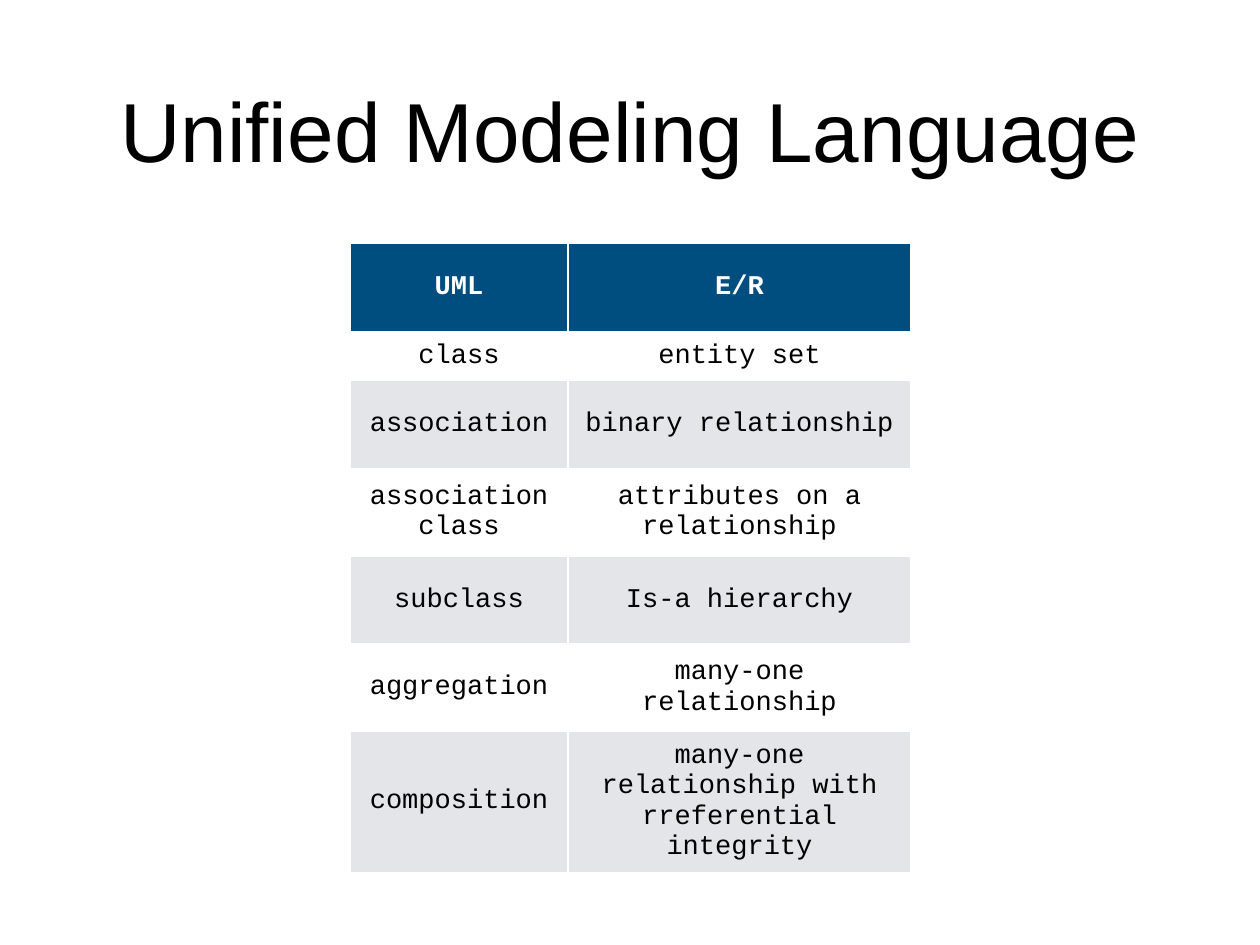
from dataclasses import dataclass

from pptx import Presentation
from pptx.dml.color import RGBColor
from pptx.enum.text import MSO_ANCHOR, PP_ALIGN
from pptx.slide import Slide
from pptx.util import Inches, Pt

PAGE_WIDTH = Inches(14.22)
PAGE_HEIGHT = Inches(10.67)
INSET = Inches(0.06)

BLACK = RGBColor(0x00, 0x00, 0x00)
WHITE = RGBColor(0xFF, 0xFF, 0xFF)
HEADER_BLUE = RGBColor(0x00, 0x4D, 0x80)
BAND_GREY = RGBColor(0xE3, 0xE5, 0xE8)

TITLE_FORMAT = {"name": "Arial", "size": Pt(68), "bold": False}
BODY_FORMAT = {"name": "Courier New", "size": Pt(22), "bold": False}
HEADER_FORMAT = BODY_FORMAT | {"bold": True}
MARGINS = {f"margin_{side}": INSET for side in ("left", "top", "right", "bottom")}

TABLE_LEFT, TABLE_TOP = 27.78, 25.77
COLUMN_PERCENTS = (17.3, 27.22)
TALL_ROW, SHORT_ROW = 9.28, 5.25


@dataclass(frozen=True)
class Mapping:
    uml: str
    entity_relationship: str
    height: float = TALL_ROW


MAPPINGS = (
    Mapping("UML", "E/R"),
    Mapping("class", "entity set", SHORT_ROW),
    Mapping("association", "binary relationship"),
    Mapping("association class", "attributes on a relationship"),
    Mapping("subclass", "Is-a hierarchy"),
    Mapping("aggregation", "many-one relationship"),
    Mapping("composition", "many-one relationship with rreferential integrity"),
)


def across(percent: float) -> int:
    return round(PAGE_WIDTH * percent / 100)


def down(percent: float) -> int:
    return round(PAGE_HEIGHT * percent / 100)


def apply(target: object, values: dict) -> None:
    for name, value in values.items():
        setattr(target, name, value)


def write(frame, text: str, values: dict, color: RGBColor) -> None:
    para = frame.paragraphs[0]
    para.alignment = PP_ALIGN.CENTER
    span = para.add_run()
    span.text = text
    apply(span.font, values)
    span.font.color.rgb = color


def draw_title(page: Slide, text: str) -> None:
    box = page.shapes.add_textbox(across(7.31), down(2.62), across(85.37), down(22.12))
    frame = box.text_frame
    apply(frame, MARGINS | {"word_wrap": True, "vertical_anchor": MSO_ANCHOR.MIDDLE})
    write(frame, text, TITLE_FORMAT, BLACK)


def draw_mappings(page: Slide, mappings: tuple[Mapping, ...]) -> None:
    table = page.shapes.add_table(
        len(mappings),
        len(COLUMN_PERCENTS),
        across(TABLE_LEFT),
        down(TABLE_TOP),
        across(sum(COLUMN_PERCENTS)),
        down(sum(mapping.height for mapping in mappings)),
    ).table
    apply(table, {"first_row": False, "horz_banding": False})
    for column, percent in zip(table.columns, COLUMN_PERCENTS):
        column.width = across(percent)
    for index, (row, mapping) in enumerate(zip(table.rows, mappings)):
        row.height = down(mapping.height)
        if index == 0:
            values, color, fill = HEADER_FORMAT, WHITE, HEADER_BLUE
        else:
            values, color = BODY_FORMAT, BLACK
            fill = WHITE if index % 2 else BAND_GREY
        for cell, text in zip(row.cells, (mapping.uml, mapping.entity_relationship)):
            apply(cell, MARGINS | {"vertical_anchor": MSO_ANCHOR.MIDDLE})
            cell.fill.solid()
            cell.fill.fore_color.rgb = fill
            write(cell.text_frame, text, values, color)


def main() -> None:
    deck = Presentation()
    apply(deck, {"slide_width": PAGE_WIDTH, "slide_height": PAGE_HEIGHT})
    page = deck.slides.add_slide(deck.slide_layouts[6])
    draw_title(page, "Unified Modeling Language")
    draw_mappings(page, MAPPINGS)
    deck.save("out.pptx")


if __name__ == "__main__":
    main()
